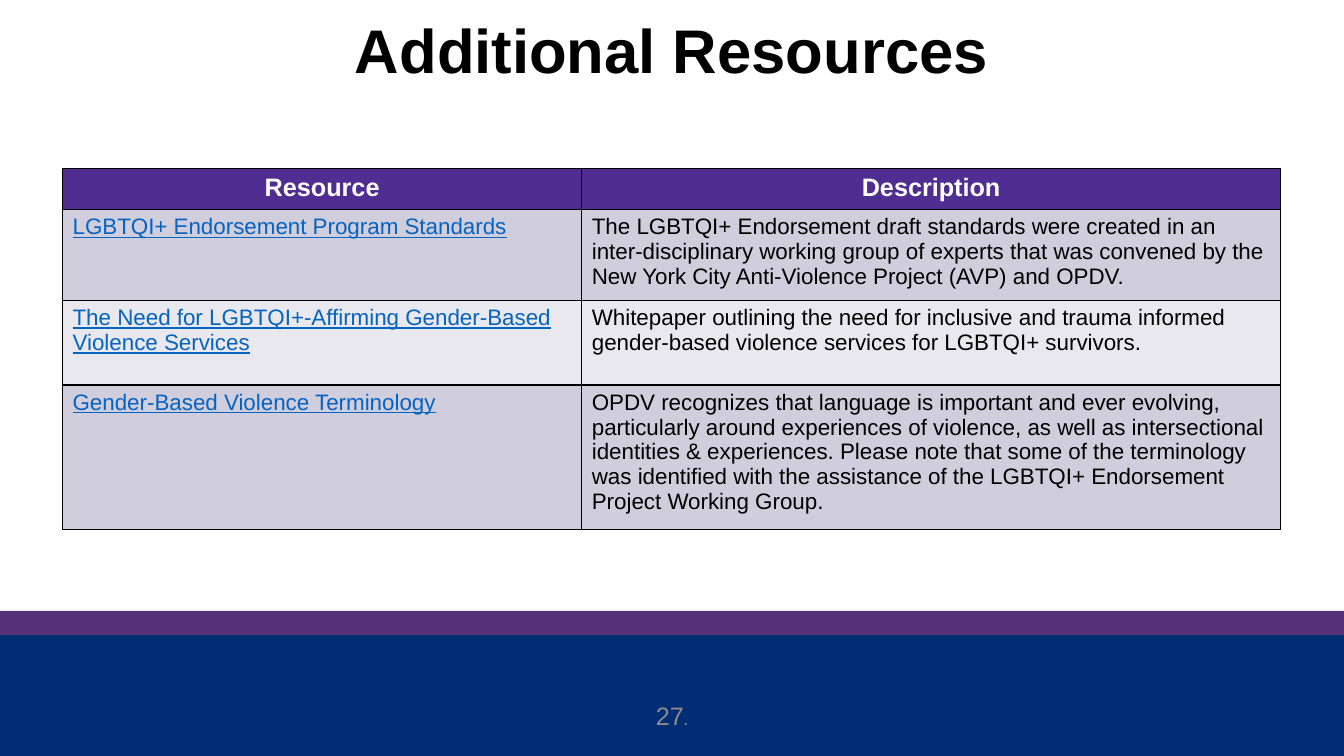
from dataclasses import dataclass

from lxml import etree
from pptx import Presentation
from pptx.dml.color import RGBColor
from pptx.enum.shapes import MSO_SHAPE
from pptx.enum.text import MSO_ANCHOR, PP_ALIGN
from pptx.oxml.ns import qn
from pptx.util import Inches, Pt

RECTANGLE = MSO_SHAPE.RECTANGLE
CENTER, LEFT = PP_ALIGN.CENTER, PP_ALIGN.LEFT
TOP, MIDDLE = MSO_ANCHOR.TOP, MSO_ANCHOR.MIDDLE


@dataclass(frozen=True)
class Theme:
    font: str = "Arial"
    accent_font: str = "Lato"
    black: str = "000000"
    white: str = "FFFFFF"
    navy: str = "002D73"
    plum: str = "553278"
    header: str = "502E91"
    rows: tuple = ("D0CDDC", "E9E8EE")
    link: str = "0563C1"
    grey: str = "8C8C8C"
    title_size: int = 44
    header_size: int = 18
    body_size: int = 16
    number_size: int = 18
    dot_size: int = 12


THEME = Theme()
HEADINGS = ("Resource", "Description")
RESOURCES = (
    ("LGBTQI+ Endorsement Program Standards",
     "The LGBTQI+ Endorsement draft standards were created in an "
     "inter-disciplinary working group of experts that was convened by the "
     "New York City Anti-Violence Project (AVP) and OPDV."),
    ("The Need for LGBTQI+-Affirming Gender-Based Violence Services",
     "Whitepaper outlining the need for inclusive and trauma informed "
     "gender-based violence services for LGBTQI+ survivors."),
    ("Gender-Based Violence Terminology",
     "OPDV recognizes that language is important and ever evolving, "
     "particularly around experiences of violence, as well as intersectional "
     "identities & experiences. Please note that some of the terminology was "
     "identified with the assistance of the LGBTQI+ Endorsement Project "
     "Working Group."),
)


def style(font, size, color, name=THEME.font, bold=False, underline=False):
    font.name, font.size = name, Pt(size)
    font.bold, font.underline = bold, underline
    font.color.rgb = RGBColor.from_string(color)


def add_band(slide, left, top, width, height, color):
    band = slide.shapes.add_shape(RECTANGLE, left, top, width, height)
    band.shadow.inherit = False
    band.fill.solid()
    band.fill.fore_color.rgb = RGBColor.from_string(color)
    band.line.fill.background()


def add_footer(slide, left, top, width, height, number):
    """Navy footer with a plum stripe on its top edge and the page number."""
    stripe_height = Inches(0.24)
    navy_top = top + Inches(0.14)
    add_band(slide, left, navy_top, width, height - Inches(0.14), THEME.navy)
    add_band(slide, left, top, width, stripe_height, THEME.plum)

    number_width = Inches(3)
    page = slide.shapes.add_textbox(left + (width - number_width) // 2,
                                    top + Inches(0.84), number_width, Inches(0.4))
    frame = page.text_frame
    frame.word_wrap = True
    frame.vertical_anchor = MIDDLE
    paragraph = frame.paragraphs[0]
    paragraph.alignment = CENTER
    for text, size, name in ((number, THEME.number_size, THEME.font),
                             (".", THEME.dot_size, THEME.accent_font)):
        run = paragraph.add_run()
        run.text = text
        style(run.font, size, THEME.grey, name)


def set_title(slide, left, top, width, height, text):
    title = slide.shapes.title
    title.left, title.top, title.width, title.height = left, top, width, height
    title.text_frame.text = text
    title.text_frame.vertical_anchor = TOP
    paragraph = title.text_frame.paragraphs[0]
    paragraph.alignment = CENTER
    paragraph.line_spacing = 0.9
    style(paragraph.font, THEME.title_size, THEME.black, bold=True)


def add_borders(cell):
    properties = cell._tc.get_or_add_tcPr()
    for position, side in enumerate(("lnL", "lnR", "lnT", "lnB")):
        border = etree.Element(qn(f"a:{side}"), w=str(Pt(1)))
        fill = etree.SubElement(border, qn("a:solidFill"))
        etree.SubElement(fill, qn("a:srgbClr"), val=THEME.black)
        properties.insert(position, border)


def fill_cell(cell, text, background, alignment, **font_style):
    cell.fill.solid()
    cell.fill.fore_color.rgb = RGBColor.from_string(background)
    add_borders(cell)
    cell.text = text
    paragraph = cell.text_frame.paragraphs[0]
    paragraph.alignment = alignment
    style(paragraph.font, **font_style)


def add_resource_table(slide, left, top, width, height):
    row_heights = [Inches(h) for h in (0.41, 0.84, 0.84, 1.34)]
    table = slide.shapes.add_table(len(RESOURCES) + 1, len(HEADINGS),
                                   left, top, width, height).table
    resource_width = Inches(5.15)
    table.columns[0].width = resource_width
    table.columns[1].width = width - resource_width
    for row, row_height in zip(table.rows, row_heights):
        row.height = row_height

    for column, heading in enumerate(HEADINGS):
        fill_cell(table.cell(0, column), heading, THEME.header, CENTER,
                  size=THEME.header_size, color=THEME.white, bold=True)
    for index, (resource, description) in enumerate(RESOURCES):
        background = THEME.rows[index % 2]
        fill_cell(table.cell(index + 1, 0), resource, background, LEFT,
                  size=THEME.body_size, color=THEME.link, underline=True)
        fill_cell(table.cell(index + 1, 1), description, background, LEFT,
                  size=THEME.body_size, color=THEME.black)


def main():
    deck = Presentation()
    deck.slide_width, deck.slide_height = Inches(13.33), Inches(7.5)
    title_only = deck.slide_layouts[5]
    slide = deck.slides.add_slide(title_only)

    footer_top = Inches(6.06)
    add_footer(slide, 0, footer_top, deck.slide_width,
               deck.slide_height - footer_top, "27")
    set_title(slide, Inches(0.16), Inches(0.15), Inches(13.01), Inches(0.79),
              "Additional Resources")
    add_resource_table(slide, Inches(0.62), Inches(1.67),
                       Inches(12.08), Inches(3.43))
    deck.save("out.pptx")


if __name__ == "__main__":
    main()
